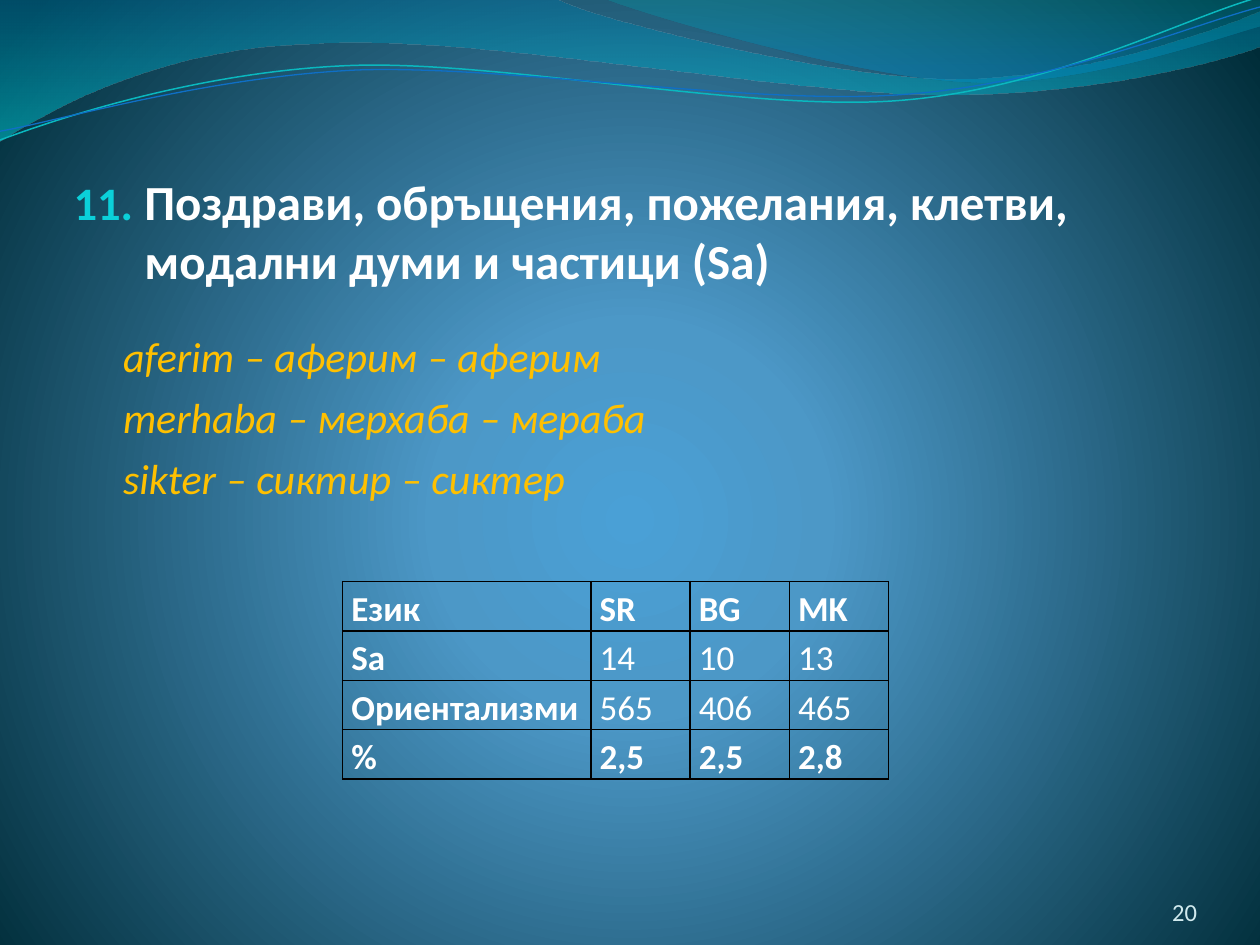
from lxml.etree import SubElement
from pptx import Presentation
from pptx.dml.color import RGBColor
from pptx.enum.text import MSO_ANCHOR, MSO_AUTO_SIZE, PP_ALIGN
from pptx.oxml.ns import qn
from pptx.util import Pt

WHITE = RGBColor(0xFF, 0xFF, 0xFF)
BLACK = RGBColor(0x00, 0x00, 0x00)
GOLD = RGBColor(0xFF, 0xC0, 0x00)
PALE = RGBColor(0xD1, 0xEA, 0xEE)
CYAN = RGBColor(0x0B, 0xD0, 0xD9)
TEAL_LINE = RGBColor(0x0A, 0xB8, 0xBF)
BLUE_LINE = RGBColor(0x0F, 0x6F, 0xC6)
SKY = RGBColor(0x4A, 0xA0, 0xD6)
STEEL = RGBColor(0x4C, 0x98, 0xC7)
NIGHT = RGBColor(0x00, 0x2C, 0x38)
OCEAN = RGBColor(0x00, 0x74, 0xA1)
AQUA = RGBColor(0x00, 0xC6, 0xCF)
TEAL = RGBColor(0x00, 0xA1, 0xA9)
AZURE = RGBColor(0x00, 0x8B, 0xBF)
FONT = "Calibri"

# Content
HEADING = "Поздрави, обръщения, пожелания, клетви, модални думи и частици (Sa)"
HEADING_NUMBER = 11
EXAMPLES = ["aferim ‒ аферим ‒ аферим", "merhaba ‒ мерхаба ‒ мераба",
            "sikter ‒ сиктир ‒ сиктер"]
COUNTS = [
    ("Език", "SR", "BG", "MK"),
    ("Sa", "14", "10", "13"),
    ("Ориентализми", "565", "406", "465"),
    ("%", "2,5", "2,5", "2,8"),
]
BOLD_ROWS = (0, 3)
PAGE_NUMBER = "20"

# Decoration: a start point, then steps of one point (line) or three (Bézier)
BACKDROP = [(0, SKY, 100), (25, STEEL, 100), (100, NIGHT, 100)]
WAVES = [
    ([(0, 0), [(317, -1)], [(343, 12), (478, 45), (546, 45)],
      [(614, 45), (690, 19), (720, 6.5)], [(721, 26)],
      [(708, 32), (626, 55), (537, 54)], [(448, 54), (275, 20), (185, 24.5)],
      [(93, 26), (33, 60), (-1, 81)]],
     [(0, OCEAN, 45), (100, AQUA, 55)]),
    ([(345, -1), [(367, 8), (491, 45), (554, 47)],
      [(616, 50), (692, 23), (720, 15)], [(720, 0)]],
     [(0, TEAL, 30), (80, AZURE, 45)]),
]
RIBBONS = [
    ([(0, 80), [(35, 67), (114, 41), (199, 37.5)],
      [(284, 34), (427, 64), (513, 57.5)], [(600, 51), (675, 11), (719, -1.5)]],
     TEAL_LINE, 0.85),
    ([(0, 75), [(34, 69), (118, 44), (204, 40)],
      [(290, 37), (430, 60.5), (516, 54)], [(602, 48), (678, 15), (720, 4)]],
     BLUE_LINE, 0.75),
]


def write(frame, text, size, color, bold=False, italic=False, align=PP_ALIGN.LEFT,
          before=0, after=0, spacing=1.0, indent=0, hanging=0):
    """Add one paragraph to the frame, filling its empty first one if there is."""
    paragraph = frame.add_paragraph() if frame.text else frame.paragraphs[0]
    paragraph.alignment = align
    paragraph.line_spacing = spacing
    paragraph.space_before, paragraph.space_after = Pt(before), Pt(after)
    properties = paragraph._p.get_or_add_pPr()
    properties.set("marL", str(Pt(indent)))
    properties.set("indent", str(Pt(-hanging)))
    run = paragraph.add_run()
    run.text = text
    run.font.name, run.font.size = FONT, Pt(size)
    run.font.bold, run.font.italic = bold, italic
    run.font.color.rgb = color
    return paragraph


def set_margins(area, left, top, right, bottom):
    area.margin_left, area.margin_top = Pt(left), Pt(top)
    area.margin_right, area.margin_bottom = Pt(right), Pt(bottom)


def place(shape, left, top, width, height):
    shape.left, shape.top, shape.width, shape.height = map(Pt, (left, top, width, height))


def set_gradient(fill, holder, stops, shade, **shade_attributes):
    fill.gradient()
    gradient = holder.find(qn("a:gradFill"))
    for child in list(gradient):
        gradient.remove(child)
    stop_list = SubElement(gradient, qn("a:gsLst"))
    for position, color, opacity in stops:
        stop = SubElement(stop_list, qn("a:gs"), pos=str(position * 1000))
        tint = SubElement(stop, qn("a:srgbClr"), val=str(color))
        if opacity < 100:
            SubElement(tint, qn("a:alpha"), val=str(opacity * 1000))
    return SubElement(gradient, qn(shade), **shade_attributes)


def add_outline(slide, outline, close):
    (x, y), *steps = outline
    builder = slide.shapes.build_freeform(Pt(x), Pt(y))
    builder.add_line_segments([(Pt(x), Pt(y)) for x, y in (s[-1] for s in steps)], close=close)
    shape = builder.convert_to_shape()
    shape.shadow.inherit = False
    # Bend the segments that have control points
    segments = list(shape._element.iter(qn("a:lnTo")))
    for segment, step in zip(segments, steps):
        if len(step) == 3:
            curve = segment.makeelement(qn("a:cubicBezTo"), {})
            for x, y in step:
                SubElement(curve, qn("a:pt"), x=str(Pt(x) - shape.left),
                           y=str(Pt(y) - shape.top))
            segment.getparent().replace(segment, curve)
    return shape


def add_borders(cell):
    properties = cell._tc.get_or_add_tcPr()
    for i, side in enumerate(("a:lnL", "a:lnR", "a:lnT", "a:lnB")):
        border = properties.makeelement(qn(side), {"w": str(Pt(1))})
        properties.insert(i, border)
        SubElement(SubElement(border, qn("a:solidFill")), qn("a:srgbClr"), val=str(BLACK))


def main():
    deck = Presentation()
    deck.slide_width, deck.slide_height = Pt(720), Pt(540)
    slide = deck.slides.add_slide(deck.slide_layouts[0])
    empty_title = slide.shapes.title._element
    empty_title.getparent().remove(empty_title)

    # Background, waves and ribbons
    circle = set_gradient(slide.background.fill, slide._element.find(".//" + qn("p:bgPr")),
                          BACKDROP, "a:path", path="circle")
    SubElement(circle, qn("a:fillToRect"), l="10000", t="110000", r="10000", b="100000")
    for outline, stops in WAVES:
        wave = add_outline(slide, outline, close=True)
        set_gradient(wave.fill, wave._element.spPr, stops, "a:lin", ang="5400000", scaled="0")
        wave.line.fill.background()
    for outline, color, width in RIBBONS:
        ribbon = add_outline(slide, outline, close=False)
        ribbon.fill.background()
        ribbon.line.color.rgb = color
        ribbon.line.width = Pt(width)

    # Numbered heading with its examples
    subtitle = slide.placeholders[1]
    place(subtitle, 42, 94.3, 641.5, 414)
    body = subtitle.text_frame
    body.word_wrap, body.auto_size = True, MSO_AUTO_SIZE.NONE
    body.vertical_anchor = MSO_ANCHOR.TOP
    set_margins(body, 0, 3.6, 1.4, 3.6)
    heading = write(body, HEADING, 28, WHITE, bold=True, after=17.8, indent=40.5, hanging=40.5)
    numbering = heading._p.get_or_add_pPr()
    SubElement(SubElement(numbering, qn("a:buClr")), qn("a:srgbClr"), val=str(CYAN))
    SubElement(numbering, qn("a:buSzPct"), val="95000")
    SubElement(numbering, qn("a:buFont"), typeface=FONT)
    SubElement(numbering, qn("a:buAutoNum"), type="arabicPeriod", startAt=str(HEADING_NUMBER))
    for example in EXAMPLES:
        write(body, example, 24, GOLD, italic=True, before=6, indent=28.3)

    # Page number
    footer = slide.shapes.add_textbox(Pt(624), Pt(500.4), Pt(60), Pt(29)).text_frame
    footer.word_wrap, footer.vertical_anchor = True, MSO_ANCHOR.BOTTOM
    set_margins(footer, 0, 0, 0, 0)
    write(footer, PAGE_NUMBER, 14, PALE, align=PP_ALIGN.RIGHT)

    # Table of counts
    column_widths, row_height = (141.9, 56.7, 56.7, 56.7), 28.2
    table = slide.shapes.add_table(
        len(COUNTS), len(column_widths), Pt(195.8), Pt(332.4),
        Pt(sum(column_widths)), Pt(row_height * len(COUNTS))).table
    table.first_row = table.horz_banding = False
    for column, width in zip(table.columns, column_widths):
        column.width = Pt(width)
    for r, counts in enumerate(COUNTS):
        table.rows[r].height = Pt(row_height)
        for c, value in enumerate(counts):
            cell = table.cell(r, c)
            cell.fill.background()
            add_borders(cell)
            set_margins(cell, 5, 0, 5, 0)
            write(cell.text_frame, value, 20, WHITE, bold=c == 0 or r in BOLD_ROWS,
                  spacing=1.15)

    deck.save("out.pptx")


if __name__ == "__main__":
    main()
